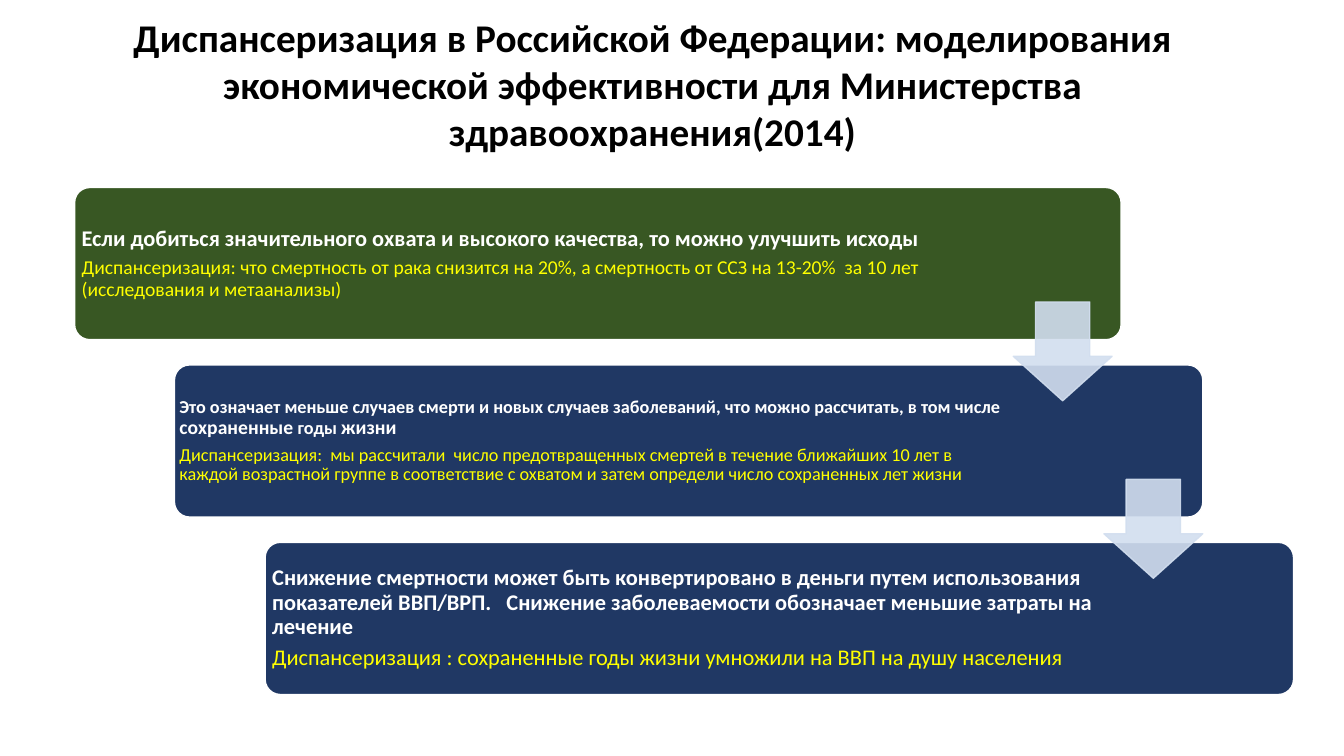
from lxml import etree
from pptx import Presentation, util as u
from pptx.dml.color import RGBColor
from pptx.enum import shapes, text
from pptx.oxml.ns import qn

COLORS = {
    "green": "385723",
    "navy": "203864",
    "arrow": "D2DEEF",
    "white": "FFFFFF",
    "yellow": "FFFF00",
    "black": "000000",
}


class CascadeSlide:
    font_name = "Calibri"
    columns = rows = 100

    def __init__(self, presentation):
        self.slide = presentation.slides.add_slide(presentation.slide_layouts[6])
        self.column = presentation.slide_width / self.columns
        self.row = presentation.slide_height / self.rows

    def box(self, left, top, width, height):
        return (round(left * self.column), round(top * self.row),
                round(width * self.column), round(height * self.row))

    def color(self, name):
        return RGBColor.from_string(COLORS[name])

    def block(self, kind, place, adjustments, fill, line, opacity=None):
        shape = self.slide.shapes.add_shape(kind, *self.box(*place))
        shape.shadow.inherit = False
        for index, value in enumerate(adjustments):
            shape.adjustments[index] = value
        shape.fill.solid()
        shape.fill.fore_color.rgb = self.color(fill)
        shape.line.color.rgb = self.color(line)
        shape.line.width = u.Pt(1)
        if opacity:
            for color in shape._element.spPr.iter(qn("a:srgbClr")):
                etree.SubElement(color, qn("a:alpha"), val=str(opacity * 1000))

    def card(self, place, fill):
        self.block(shapes.MSO_SHAPE.ROUNDED_RECTANGLE, place, [0.1], fill, "white")

    def arrow(self, place):
        self.block(shapes.MSO_SHAPE.DOWN_ARROW, place, [0.55, 0.45],
                   "arrow", "arrow", opacity=90)

    def text_box(self, place, inset=None):
        frame = self.slide.shapes.add_textbox(*self.box(*place)).text_frame
        frame.word_wrap = True
        frame.vertical_anchor = text.MSO_ANCHOR.MIDDLE
        if inset:
            frame.margin_left = frame.margin_right = u.Inches(inset)
            frame.margin_top = frame.margin_bottom = u.Inches(inset)
        return frame

    def fill_paragraph(self, paragraph, runs, size, color, bold):
        paragraph.font.name = self.font_name
        paragraph.font.size = u.Pt(size)
        paragraph.font.bold = bold
        paragraph.font.color.rgb = self.color(color)
        for words, run_size in runs:
            run = paragraph.add_run()
            run.text = words
            if run_size != size:
                run.font.size = u.Pt(run_size)

    def title(self, place, words):
        paragraph = self.text_box(place).paragraphs[0]
        paragraph.alignment = text.PP_ALIGN.CENTER
        self.fill_paragraph(paragraph, [(words, 28)], 28, "black", True)

    def statement(self, place, inset, claim, claim_size, detail, detail_size):
        frame = self.text_box(place, inset)
        self.fill_paragraph(frame.paragraphs[0], claim, claim_size, "white", True)
        self.fill_paragraph(frame.add_paragraph(), [(detail, detail_size)],
                            detail_size, "yellow", False)
        for paragraph in frame.paragraphs:
            paragraph.line_spacing = 0.9
            paragraph.space_after = u.Pt(5)


STEPS = [
    {
        "left": 5.55, "width": 77.87, "text_width": 66.09, "fill": "green", "inset": 0.07,
        "claim": [("Если добиться значительного охвата и высокого качества, "
                   "то можно улучшить исходы", 16)],
        "claim_size": 16,
        "detail": "Диспансеризация: что смертность от рака снизится на 20%, "
                  "а смертность от ССЗ на 13-20%  за 10 лет (исследования и метаанализы)",
        "detail_size": 14,
    },
    {
        "left": 12.98, "width": 76.52, "text_width": 62.42, "fill": "navy", "inset": 0.05,
        "claim": [("Это означает меньше случаев смерти и новых случаев заболеваний, "
                   "что можно рассчитать, в том числе ", 13),
                  ("сохраненные", 14), (" годы ", 13), ("жизни", 14)],
        "claim_size": 13,
        "detail": "Диспансеризация:  мы рассчитали  число предотвращенных смертей "
                  "в течение ближайших 10 лет в каждой возрастной группе в соответствие "
                  "с охватом и затем определи число сохраненных лет жизни",
        "detail_size": 13,
    },
    {
        "left": 19.73, "width": 76.52, "text_width": 62.42, "fill": "navy", "inset": 0.07,
        "claim": [("Снижение смертности может быть конвертировано в деньги путем "
                   "использования  показателей ВВП/ВРП.   Снижение заболеваемости "
                   "обозначает меньшие затраты на лечение", 16)],
        "claim_size": 16,
        "detail": "Диспансеризация : сохраненные годы жизни умножили на ВВП "
                  "на душу населения",
        "detail_size": 16,
    },
]

FIRST_ROW, ROW_STEP, CARD_ROWS = 24.8, 23.47, 20.13
ARROW_LEFT, ARROW_TOP, ARROW_SHIFT = 75.39, 39.95, 6.75
ARROW_COLUMNS, ARROW_ROWS = 7.35, 13.07


def main():
    presentation = Presentation()
    presentation.slide_width = u.Inches(13.33)
    presentation.slide_height = u.Inches(7.5)
    cascade = CascadeSlide(presentation)

    for index, step in enumerate(STEPS):
        top = FIRST_ROW + index * ROW_STEP
        cascade.card((step["left"], top, step["width"], CARD_ROWS), step["fill"])
        cascade.statement((step["left"], top, step["text_width"], CARD_ROWS),
                          step["inset"], step["claim"], step["claim_size"],
                          step["detail"], step["detail_size"])

    for index in range(len(STEPS) - 1):
        cascade.arrow((ARROW_LEFT + index * ARROW_SHIFT, ARROW_TOP + index * ROW_STEP,
                       ARROW_COLUMNS, ARROW_ROWS))

    cascade.title((3.53, 2.8, 90, 16.67),
                  "Диспансеризация в Российской Федерации: моделирования экономической "
                  "эффективности для Министерства здравоохранения(2014)")
    presentation.save("out.pptx")


if __name__ == "__main__":
    main()
